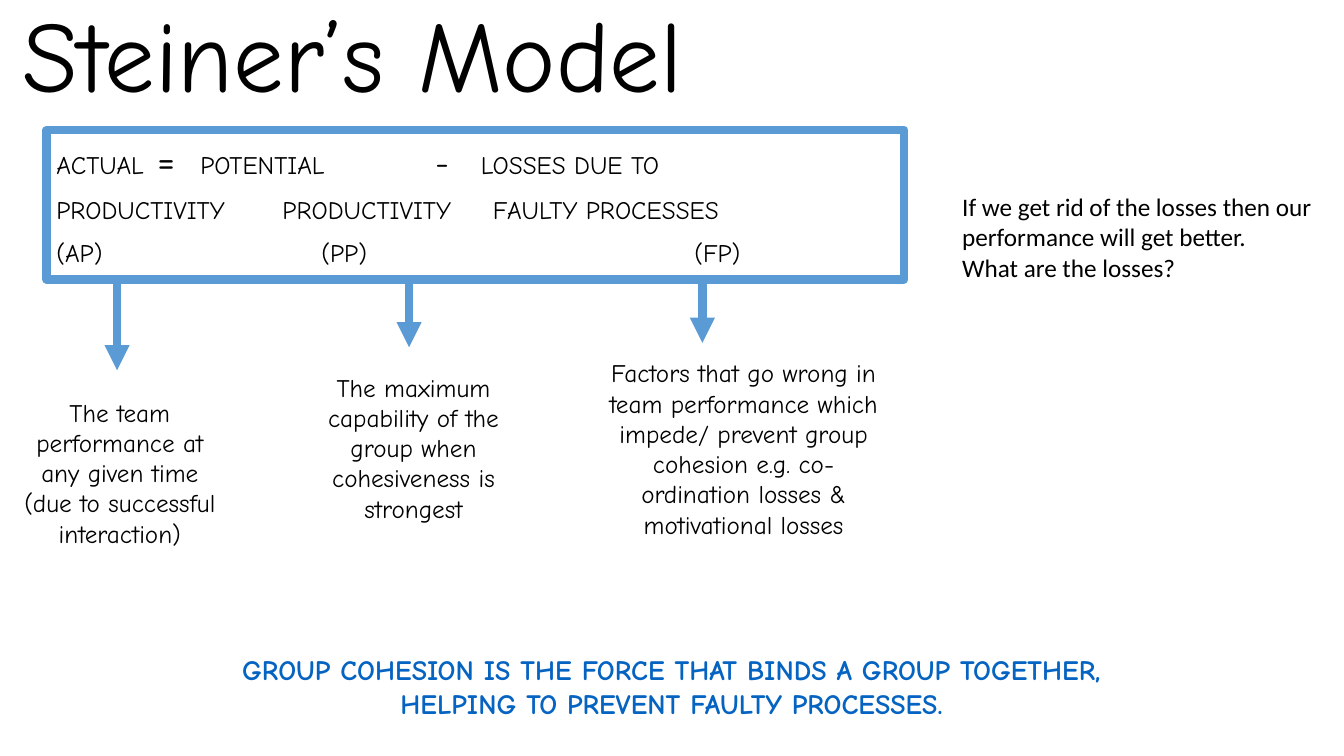
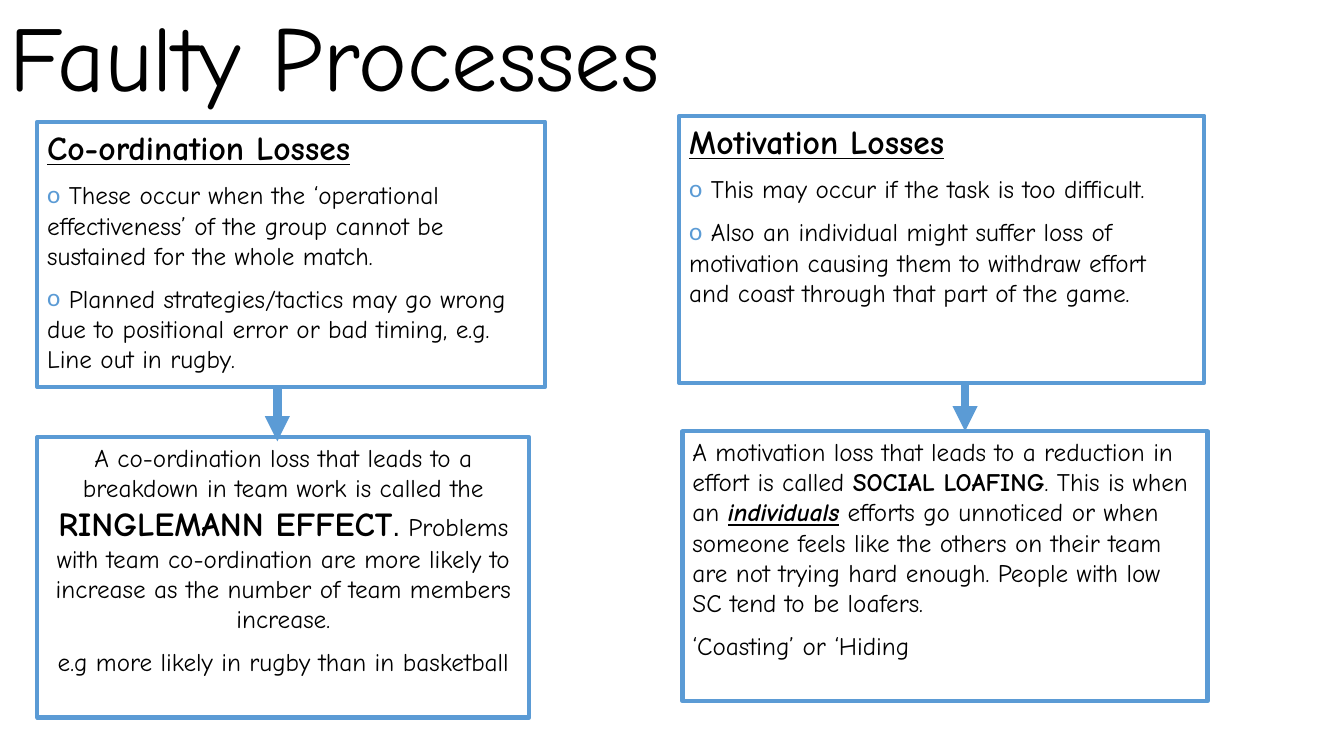
from dataclasses import dataclass

from lxml.etree import SubElement
from pptx import Presentation
from pptx.dml.color import RGBColor
from pptx.enum.shapes import MSO_CONNECTOR as Connector, MSO_SHAPE as Preset
from pptx.enum.text import MSO_ANCHOR as Anchor, PP_ALIGN as Align
from pptx.oxml.ns import qn
from pptx.util import Cm, Pt

BLACK, BLUE, LINK = "000000", "5B9BD5", "0563C1"
HAND, SANS, FALLBACK = "Comic Neue", "Calibri", "DejaVu Sans"


@dataclass
class Box:
    left: float
    top: float
    width: float
    height: float

    @property
    def bottom(self):
        return self.top + self.height

    def lengths(self):
        return Cm(self.left), Cm(self.top), Cm(self.width), Cm(self.height)


@dataclass
class Span:
    text: str
    size: float = 18
    font: str = HAND
    color: str = BLACK
    bold: bool = False
    italic: bool = False
    underline: bool = False


@dataclass
class Para:
    spans: list
    align: Align = Align.LEFT
    bullet: bool = False
    tabs: tuple = ()
    before: float = 9


def rgb(value):
    return RGBColor.from_string(value)


def add_bullet(properties):
    properties.set("marL", "0")
    properties.set("indent", "0")
    color = SubElement(properties, qn("a:buClr"))
    SubElement(color, qn("a:srgbClr"), val=BLUE)
    SubElement(properties, qn("a:buFont"), typeface=SANS)
    SubElement(properties, qn("a:buChar"), char="o")


def add_tabs(properties, stops):
    tab_list = SubElement(properties, qn("a:tabLst"))
    for stop in stops:
        SubElement(tab_list, qn("a:tab"), pos=str(Cm(stop)), algn="l")


def write(frame, paras, anchor=Anchor.TOP):
    frame.word_wrap = True
    frame.vertical_anchor = anchor
    for index, para in enumerate(paras):
        target = frame.add_paragraph() if index else frame.paragraphs[0]
        target.alignment = para.align
        target.space_before = Pt(para.before if index else 0)
        properties = target._p.get_or_add_pPr()
        if para.bullet:
            add_bullet(properties)
        if para.tabs:
            add_tabs(properties, para.tabs)
        for span in para.spans:
            run = target.add_run()
            run.text = span.text
            font = run.font
            font.name, font.size = span.font, Pt(span.size)
            font.color.rgb = rgb(span.color)
            font.bold, font.italic = span.bold, span.italic
            font.underline = span.underline


def add_text(page, box, paras, anchor=Anchor.TOP):
    frame = page.shapes.add_textbox(*box.lengths()).text_frame
    write(frame, paras, anchor)
    return frame


def add_title(page, box, text, size):
    frame = add_text(page, box, [Para([Span(text, size)])], Anchor.MIDDLE)
    frame.paragraphs[0].line_spacing = 0.9


def add_framed(page, box, paras, weight):
    shape = page.shapes.add_shape(Preset.RECTANGLE, *box.lengths())
    shape.shadow.inherit = False
    shape.fill.background()
    shape.line.color.rgb = rgb(BLUE)
    shape.line.width = Pt(weight)
    write(shape.text_frame, paras)


def add_down_arrow(page, x, top, bottom):
    arrow = page.shapes.add_connector(
        Connector.STRAIGHT, Cm(x), Cm(top), Cm(x), Cm(bottom))
    arrow.line.color.rgb = rgb(BLUE)
    arrow.line.width = Pt(6)
    SubElement(arrow.line._get_or_add_ln(), qn("a:tailEnd"), type="triangle")
    SubElement(arrow._element.spPr, qn("a:effectLst"))


def add_equation(page, box):
    add_framed(page, box, [
        Para([Span("ACTUAL\t"), Span("=", 28), Span("\tPOTENTIAL\t"),
              Span("-", 24), Span("\tLOSSES DUE TO")],
             tabs=(2.54, 3.63, 9.55, 10.7)),
        Para([Span("PRODUCTIVITY\tPRODUCTIVITY\tFAULTY PROCESSES")],
             tabs=(5.7, 11)),
        Para([Span("(AP)\t(PP)\t(FP)")], tabs=(6.68, 16.08)),
    ], 6)


def add_definition(page, box, text, arrow_top, arrow_x, gap):
    add_text(page, box, [Para([Span(text)], Align.CENTER)])
    add_down_arrow(page, box.left + arrow_x, arrow_top, box.top - gap)


def add_loss_column(page, cause, effect, heading, points, outcome,
                    arrow_x, overlap):
    add_framed(page, cause, [
        Para([Span(heading, 24, bold=True, underline=True)]),
        *(Para([Span(" " + point)], bullet=True) for point in points),
    ], 3)
    add_framed(page, effect, outcome, 3)
    add_down_arrow(page, cause.left + arrow_x, cause.bottom,
                   effect.top + overlap)


def build_model(page):
    add_title(page, Box(0.33, -0.33, 29.2, 3.68), "Steiner’s Model", 72)
    equation = Box(1.17, 3.28, 21.62, 3.76)
    add_equation(page, equation)
    definitions = [
        (Box(0.33, 9.88, 5.38, 4.83),
         "The team performance at any given time "
         "(due to successful interaction)", 2.62, 0.55),
        (Box(7.92, 9.25, 5, 4.83),
         "The maximum capability of the group when "
         "cohesiveness is strongest", 2.39, 0.5),
        (Box(14.94, 8.89, 7.6, 4.83),
         "Factors that go wrong in team performance which impede/ prevent "
         "group cohesion e.g. co-ordination losses & motivational losses",
         2.76, 0.25),
    ]
    for box, text, arrow_x, gap in definitions:
        add_definition(page, box, text, equation.bottom, arrow_x, gap)
    add_text(page, Box(4.93, 16.33, 24, 1.96), [Para([Span(
        "GROUP COHESION IS THE FORCE THAT BINDS A GROUP TOGETHER, "
        "HELPING TO PREVENT FAULTY PROCESSES.",
        20, color=LINK, bold=True)], Align.CENTER)])
    add_text(page, Box(24, 4.7, 9.8, 2.57), [
        Para([Span(text, font=SANS)], before=0) for text in (
            "If we get rid of the losses then our performance "
            "will get better.", "What are the losses?")])


def build_processes(page):
    add_title(page, Box(0, -0.28, 29.2, 3.68), "Faulty Processes", 66)
    add_loss_column(
        page, Box(0.94, 3.07, 12.8, 6.68), Box(0.94, 11.02, 12.4, 7.06),
        "Co-ordination Losses",
        ["These occur when the ‘operational effectiveness’ of the group "
         "cannot be sustained for the whole match.",
         "Planned strategies/tactics may go wrong due to positional error "
         "or bad timing, e.g. Line out in rugby."],
        [Para([Span("A co-ordination loss that leads to a breakdown in team "
                    "work is called the "),
               Span("RINGLEMANN EFFECT", 24, bold=True),
               Span(". ", font=FALLBACK),
               Span("Problems with team co-ordination are more likely to "
                    "increase as the number of team members increase.")],
              Align.CENTER),
         Para([Span("e.g more likely in rugby than in basketball")],
              Align.CENTER)],
        6.05, 0.1)
    add_loss_column(
        page, Box(17.12, 2.92, 13.23, 6.73), Box(17.2, 10.87, 13.23, 6.8),
        "Motivation Losses",
        ["This may occur if the task is too difficult.",
         "Also an individual might suffer loss of motivation causing them "
         "to withdraw effort and coast through that part of the game."],
        [Para([Span("A motivation loss that leads to a reduction in effort "
                    "is called "),
               Span("SOCIAL LOAFING", bold=True),
               Span(". This is when an "),
               Span("individuals", bold=True, italic=True, underline=True),
               Span(" efforts go unnoticed or when someone feels like the "
                    "others on their team are not trying hard enough. "
                    "People with low SC tend to be loafers.")]),
         Para([Span("‘Coasting’ or ‘Hiding")])],
        7.2, 0)


def main():
    deck = Presentation()
    deck.slide_width, deck.slide_height = Cm(33.87), Cm(19.05)
    for build in (build_model, build_processes):
        build(deck.slides.add_slide(deck.slide_layouts[6]))
    deck.save("out.pptx")


if __name__ == "__main__":
    main()
